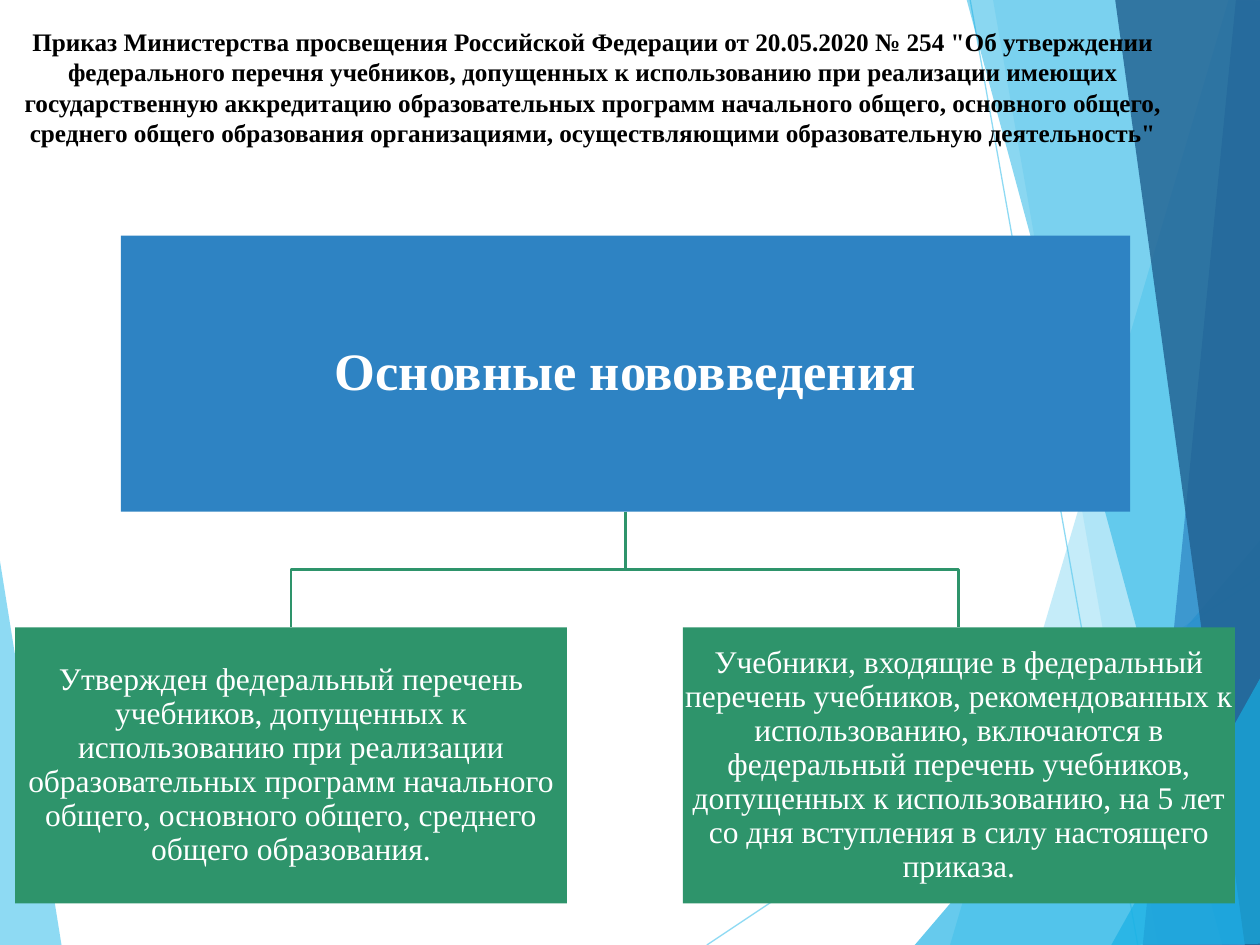
from dataclasses import dataclass

from lxml import etree
from pptx import Presentation
from pptx.dml import color as dml_color
from pptx.enum import shapes, text
from pptx.oxml import ns
from pptx.util import Inches, Pt

FONT = "Times New Roman"
BLUE = "2E83C3"
GREEN = "2E946B"
SKY = "5FCBEF"
CYAN = "17B0E4"
NAVY = "226292"
Point = tuple[float, float]


@dataclass
class Facet:
    points: list[Point]
    color: str
    opacity: int


@dataclass
class Ray:
    start: Point
    end: Point


@dataclass
class Box:
    left: float
    top: float
    width: float
    height: float
    wording: str
    color: str
    size: float
    bold: bool = False
    inset: float = 0.01

    @property
    def center(self) -> float:
        return self.left + self.width / 2


LEFT_FACET = Facet([(-0.01, 4.39), (0.49, 7.51), (-0.01, 7.5)], SKY, 70)
RAYS = [Ray((5.61, 7.5), (10.01, 4.57)), Ray((7.7, 0), (9.03, 7.5))]
RIGHT_FACETS = [
    Facet([(9.75, 0), (7.54, 7.5), (10.02, 7.51), (10.01, 0.01)], SKY, 36),
    Facet([(7.88, -0.01), (9.19, 7.5), (10.01, 7.5), (10.01, -0.01)], SKY, 20),
    Facet([(7.26, 7.5), (10, 4.29), (10.01, 7.5)], CYAN, 66),
    Facet([(7.67, -0.01), (9.7, 7.5), (10.01, 7.49), (10.01, -0.01)], CYAN, 50),
    Facet([(9.81, -0.01), (9.07, 7.5), (10.01, 7.5), (10, -0.01)], BLUE, 70),
    Facet([(8.85, -0.01), (9.88, 7.5), (10.02, 7.5), (10, -0.01)], NAVY, 82),
    Facet([(8.82, 7.5), (10.02, 5.35), (10.02, 7.49)], CYAN, 66),
]
TITLE = (
    'Приказ Министерства просвещения Российской Федерации от 20.05.2020 № 254 "Об утверждении '
    "федерального перечня учебников, допущенных к использованию при реализации имеющих "
    "государственную аккредитацию образовательных программ начального общего, основного общего, "
    'среднего общего образования организациями, осуществляющими образовательную деятельность"'
)
PARENT = Box(0.96, 1.87, 8.01, 2.19, "Основные нововведения", BLUE, 30, True, 0.02)
CHILDREN = [
    Box(left, 4.98, 4.38, 2.19, wording, GREEN, 18)
    for left, wording in [
        (0.12, "Утвержден федеральный перечень учебников, допущенных к использованию при реализации "
               "образовательных программ начального общего, основного общего, среднего общего образования."),
        (5.42, "Учебники, входящие в федеральный перечень учебников, рекомендованных к использованию, "
               "включаются в федеральный перечень учебников, допущенных к использованию, на 5 лет "
               "со дня вступления в силу настоящего приказа."),
    ]
]


def rgb(value: str) -> dml_color.RGBColor:
    return dml_color.RGBColor.from_string(value)


def set_opacity(shape, percent: int) -> None:
    color = next(shape._element.iter(ns.qn("a:srgbClr")))
    etree.SubElement(color, ns.qn("a:alpha"), val=str(percent * 1000))


def add_outline(slide, points: list[Point], close: bool):
    start, *others = [(Inches(x), Inches(y)) for x, y in points]
    builder = slide.shapes.build_freeform(*start)
    builder.add_line_segments(others, close=close)
    shape = builder.convert_to_shape()
    shape.shadow.inherit = False
    return shape


def add_facet(slide, facet: Facet) -> None:
    shape = add_outline(slide, facet.points, True)
    shape.fill.solid()
    shape.fill.fore_color.rgb = rgb(facet.color)
    shape.line.fill.background()
    set_opacity(shape, facet.opacity)


def add_ray(slide, ray: Ray) -> None:
    line = slide.shapes.add_connector(
        shapes.MSO_CONNECTOR.STRAIGHT, *map(Inches, ray.start + ray.end))
    line.line.color.rgb = rgb(SKY)
    line.line.width = Pt(0.75)
    set_opacity(line, 70)
    etree.SubElement(line._element.spPr, ns.qn("a:effectLst"))


def add_branch(slide, parent: Box, child: Box) -> None:
    bottom = parent.top + parent.height
    middle = (bottom + child.top) / 2
    points = [(parent.center, bottom), (parent.center, middle),
              (child.center, middle), (child.center, child.top)]
    branch = add_outline(slide, points, False)
    branch.fill.background()
    branch.line.color.rgb = rgb(GREEN)
    branch.line.width = Pt(1.5)


def format_paragraph(paragraph, size: float, color: str, bold: bool) -> None:
    paragraph.alignment = text.PP_ALIGN.CENTER
    paragraph.font.name = FONT
    paragraph.font.size = Pt(size)
    paragraph.font.bold = bold
    paragraph.font.color.rgb = rgb(color)


def add_box(slide, box: Box) -> None:
    shape = slide.shapes.add_shape(
        shapes.MSO_SHAPE.RECTANGLE,
        *map(Inches, (box.left, box.top, box.width, box.height)))
    shape.shadow.inherit = False
    shape.fill.solid()
    shape.fill.fore_color.rgb = rgb(box.color)
    shape.line.fill.background()
    frame = shape.text_frame
    frame.word_wrap = True
    frame.vertical_anchor = text.MSO_ANCHOR.MIDDLE
    frame.margin_left = frame.margin_right = Inches(box.inset)
    frame.margin_top = frame.margin_bottom = Inches(box.inset)
    frame.text = box.wording
    paragraph = frame.paragraphs[0]
    paragraph.line_spacing = 0.9
    format_paragraph(paragraph, box.size, "FFFFFF", box.bold)


def place_title(slide) -> None:
    title = slide.shapes.title
    title.left, title.top, title.width, title.height = map(Inches, (0, 0.16, 9.41, 1.25))
    frame = title.text_frame
    frame.word_wrap = True
    frame.auto_size = text.MSO_AUTO_SIZE.NONE
    frame.vertical_anchor = text.MSO_ANCHOR.TOP
    frame.text = TITLE
    format_paragraph(frame.paragraphs[0], 14.4, "000000", True)
    title._element.getparent().append(title._element)


def main() -> None:
    presentation = Presentation()
    presentation.slide_width = Inches(10)
    presentation.slide_height = Inches(7.5)
    slide = presentation.slides.add_slide(presentation.slide_layouts[5])
    add_facet(slide, LEFT_FACET)
    for ray in RAYS:
        add_ray(slide, ray)
    for facet in RIGHT_FACETS:
        add_facet(slide, facet)
    place_title(slide)
    for child in CHILDREN:
        add_branch(slide, PARENT, child)
    for box in [PARENT, *CHILDREN]:
        add_box(slide, box)
    presentation.save("out.pptx")


if __name__ == "__main__":
    main()
